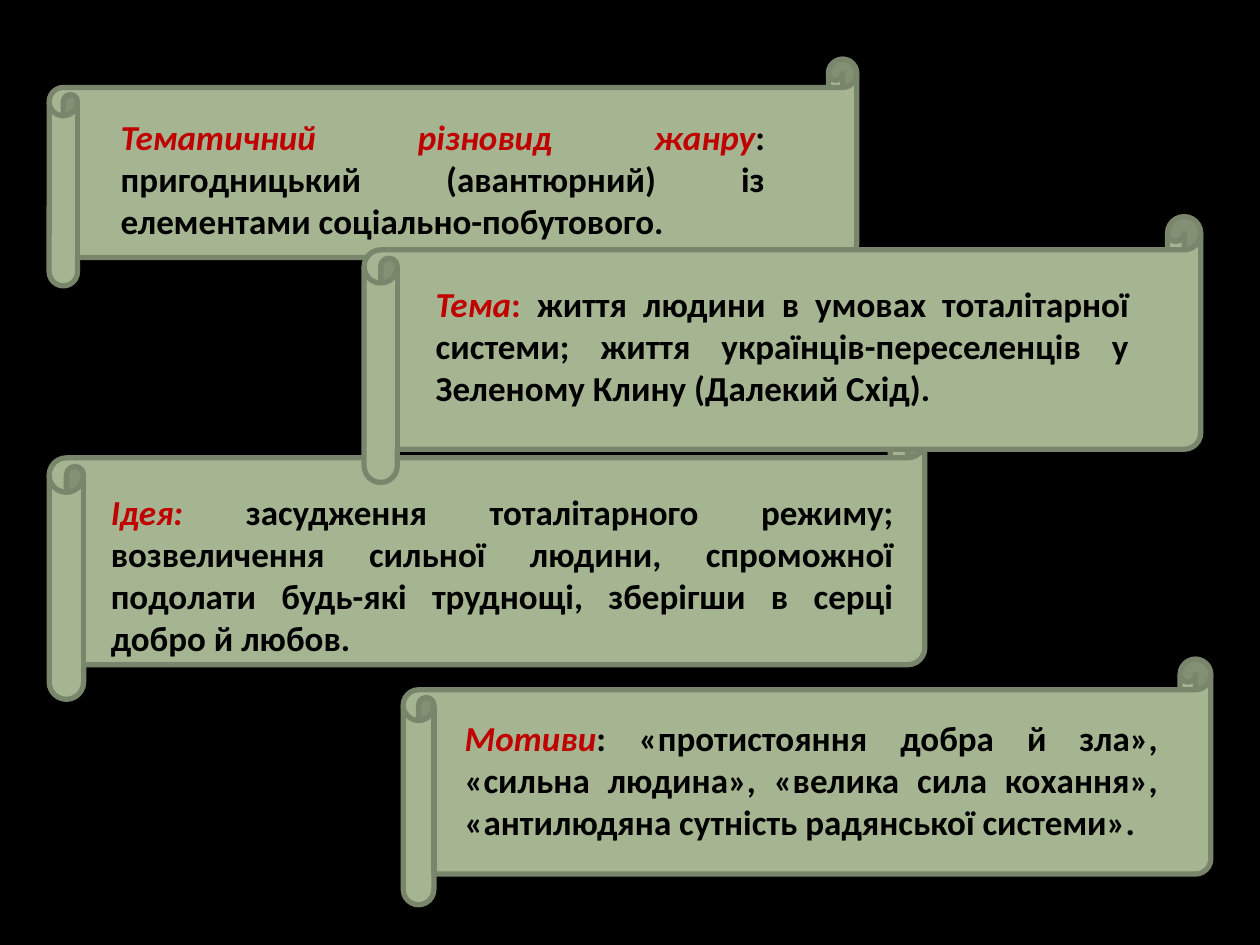
from dataclasses import dataclass

from pptx import Presentation
from pptx.dml.color import RGBColor
from pptx.enum.shapes import MSO_SHAPE
from pptx.enum.text import MSO_ANCHOR, MSO_AUTO_SIZE, PP_ALIGN
from pptx.util import Pt

SCROLL = MSO_SHAPE.HORIZONTAL_SCROLL
MIDDLE = MSO_ANCHOR.MIDDLE
FIT_SHAPE = MSO_AUTO_SIZE.SHAPE_TO_FIT_TEXT
JUSTIFY = PP_ALIGN.JUSTIFY


@dataclass(frozen=True)
class Theme:
    background: RGBColor = RGBColor(0x00, 0x00, 0x00)
    scroll: RGBColor = RGBColor(0xA5, 0xB5, 0x92)
    outline: RGBColor = RGBColor(0x7A, 0x86, 0x6C)
    heading: RGBColor = RGBColor(0xC0, 0x00, 0x00)
    body: RGBColor = RGBColor(0x00, 0x00, 0x00)
    font: str = "Calibri"
    size: int = 20
    line: int = 3


THEME = Theme()
HEADING = (THEME.heading, True)
COLON = (THEME.heading, False)
BODY = (THEME.body, False)

SCROLLS = [
    (28.1, 33.8, 461.5, 129.6),
    (28.1, 241.9, 500.4, 157.7),
    (208.1, 123.8, 478.1, 151.9),
    (230.4, 376.6, 461.5, 140.4),
]

TEXTS = [
    ((61.9, 61.9, 382.3, 79.9), [
        ("Тематичний різновид жанру", HEADING),
        (": пригодницький (авантюрний) із елементами соціально-побутового.", BODY),
    ]),
    ((241.9, 157.7, 410.4, 79.9), [
        ("Тема", HEADING),
        (": ", COLON),
        ("життя людини в умовах тоталітарної системи; життя "
         "українців-переселенців у Зеленому Клину (Далекий Схід).", BODY),
    ]),
    ((56.2, 275.8, 461.5, 104.4), [
        ("Ідея: ", HEADING),
        ("засудження тоталітарного режиму; возвеличення сильної людини, "
         "спроможної подолати будь-які труднощі, зберігши в серці добро й любов.", BODY),
    ]),
    ((258.5, 405.4, 410.4, 79.9), [
        ("Мотиви", HEADING),
        (": «протистояння добра й зла», «сильна людина», «велика сила кохання», "
         "«антилюдяна сутність радянської системи».", BODY),
    ]),
]


def add_scroll(slide, box):
    sp = slide.shapes.add_shape(SCROLL, *map(Pt, box))
    sp.shadow.inherit = False
    sp.fill.solid()
    sp.fill.fore_color.rgb = THEME.scroll
    sp.line.color.rgb = THEME.outline
    sp.line.width = Pt(THEME.line)


def add_text(slide, box, runs):
    tf = slide.shapes.add_textbox(*map(Pt, box)).text_frame
    tf.word_wrap = True
    tf.auto_size = FIT_SHAPE
    tf.vertical_anchor = MIDDLE
    p = tf.paragraphs[0]
    p.alignment = JUSTIFY
    for text, (color, italic) in runs:
        r = p.add_run()
        r.text = text
        r.font.name = THEME.font
        r.font.size = Pt(THEME.size)
        r.font.bold = True
        r.font.italic = italic
        r.font.color.rgb = color


def main():
    prs = Presentation()
    prs.slide_width, prs.slide_height = Pt(720), Pt(540)
    slide = prs.slides.add_slide(prs.slide_layouts[6])
    fill = slide.background.fill
    fill.solid()
    fill.fore_color.rgb = THEME.background
    for box in SCROLLS:
        add_scroll(slide, box)
    for box, runs in TEXTS:
        add_text(slide, box, runs)
    prs.save("out.pptx")


if __name__ == "__main__":
    main()
